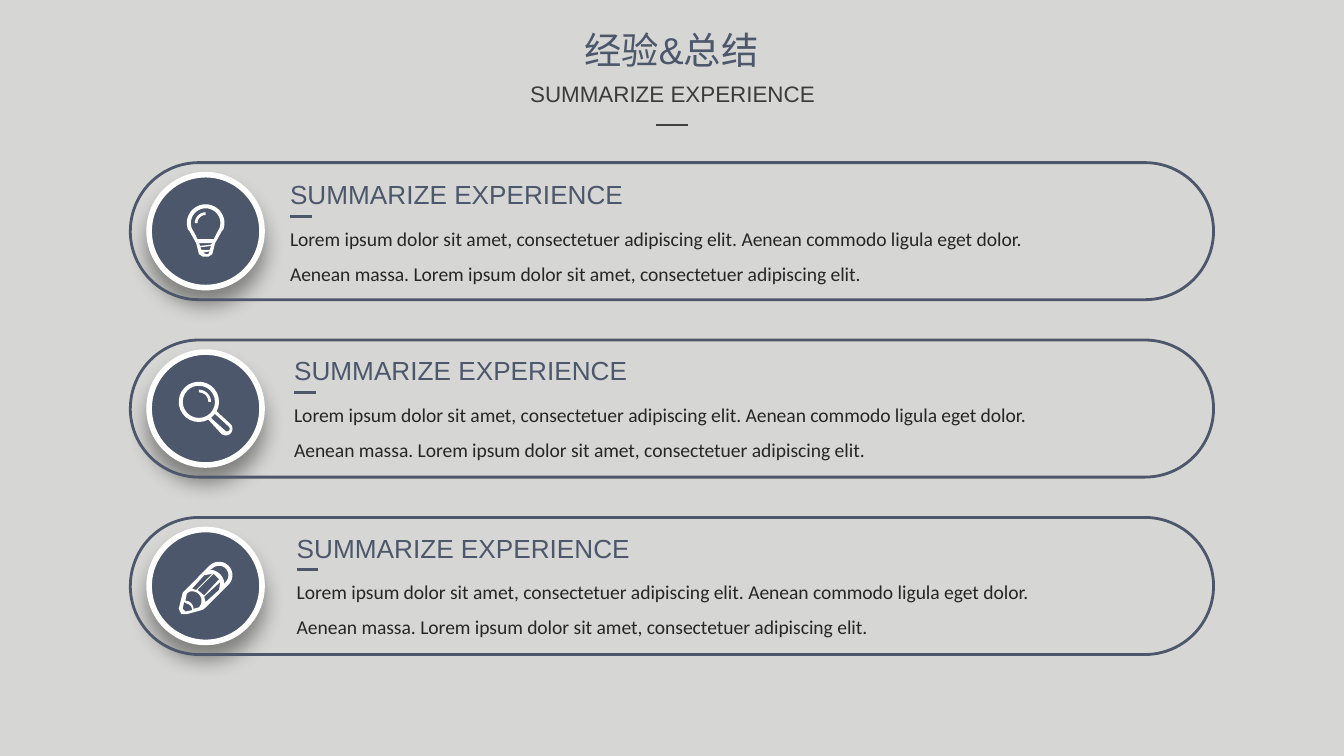
from math import cos, radians, sin

from lxml import etree
from pptx import Presentation
from pptx.dml.color import RGBColor
from pptx.enum.shapes import MSO_CONNECTOR, MSO_SHAPE
from pptx.enum.text import MSO_AUTO_SIZE, PP_ALIGN
from pptx.oxml import parse_xml
from pptx.oxml.ns import nsdecls, qn
from pptx.util import Inches, Pt

STRAIGHT = MSO_CONNECTOR.STRAIGHT
OVAL = MSO_SHAPE.OVAL
PILL = MSO_SHAPE.ROUNDED_RECTANGLE
FIT = MSO_AUTO_SIZE.SHAPE_TO_FIT_TEXT
CENTER, LEFT = PP_ALIGN.CENTER, PP_ALIGN.LEFT
COLORS = {
    "background": "D6D6D4", "slate": "4C576B", "subtitle": "3B3B3B",
    "rule": "404040", "body": "262626", "white": "FFFFFF",
}
COLORS = {name: RGBColor.from_string(value) for name, value in COLORS.items()}
HEADING = "SUMMARIZE EXPERIENCE"
BODY = (
    "Lorem ipsum dolor sit amet, consectetuer adipiscing elit. "
    "Aenean commodo ligula eget dolor. Aenean massa. "
    "Lorem ipsum dolor sit amet, consectetuer adipiscing elit."
)

deck = Presentation()
deck.slide_width = Inches(10)
deck.slide_height = deck.slide_width * 9 // 16
page = deck.slides.add_slide(deck.slide_layouts[6])
page.background.fill.solid()
page.background.fill.fore_color.rgb = COLORS["background"]


def add_text(text, frame, size, color, font="Arial", align=LEFT, wrap=True, spacing=None):
    box = page.shapes.add_textbox(*map(Inches, frame))
    box.text_frame.text = text
    box.text_frame.word_wrap = wrap
    box.text_frame.auto_size = FIT
    para = box.text_frame.paragraphs[0]
    para.alignment = align
    para.line_spacing = spacing
    span = para.runs[0]
    span.font.size, span.font.name = Pt(size), font
    span.font.color.rgb = COLORS[color]


def arc(x, y, radius, start, end):
    """Points along an arc, in degrees clockwise from the right."""
    angles = [radians(start + (end - start) * step / 24) for step in range(25)]
    return [(x + radius * cos(angle), y + radius * sin(angle)) for angle in angles]


# Title block
rules = [(4.88, 0.93, 0.24, "rule")]
add_text(HEADING, (3.26, 0.55, 3.49, 0.3), 12, "subtitle", align=CENTER)
add_text("经验&总结", (3.82, 0.15, 2.35, 0.44), 20, "slate", align=CENTER)

# Three rows: badge, pill outline and text
for row, (text_left, rule_top) in enumerate([(2.06, 1.61), (2.09, 2.92), (2.11, 4.24)]):
    top = 1.21 + 1.32 * row
    badge = page.shapes.add_shape(
        OVAL, Inches(1.11), Inches(top + 0.09), Inches(0.84), Inches(0.84))
    badge.fill.solid()
    badge.fill.fore_color.rgb = COLORS["slate"]
    badge.line.color.rgb = COLORS["white"]
    badge.line.width = Pt(3)
    badge._element.spPr.append(parse_xml(
        f'<a:effectLst {nsdecls("a")}>'
        f'<a:outerShdw blurRad="{Pt(11)}" dist="{Pt(8)}" dir="5400000" rotWithShape="0">'
        '<a:srgbClr val="000000"><a:alpha val="40000"/></a:srgbClr>'
        '</a:outerShdw></a:effectLst>'))

    pill = page.shapes.add_shape(
        PILL, Inches(0.97), Inches(top), Inches(8.06), Inches(1.02))
    pill.adjustments[0] = 0.5
    pill.shadow.inherit = False
    pill.fill.background()
    pill.line.color.rgb = COLORS["slate"]
    pill.line.width = Pt(1.5)

    add_text(BODY, (text_left, rule_top - 0.06, 5.74, 0.63), 10.5, "body",
             font="Calibri", spacing=1.5)
    add_text(HEADING, (text_left, rule_top - 0.33, 2.7, 0.34), 14, "slate", wrap=False)
    rules.append((text_left + 0.1, rule_top, 0.16, "slate"))

for left, top, width, color in rules:
    rule = page.shapes.add_connector(
        STRAIGHT, Inches(left), Inches(top), Inches(left + width), Inches(top))
    rule.line.color.rgb = COLORS[color]
    rule.line.width = Pt(1.5)
    etree.SubElement(rule._element.spPr, qn("a:effectLst"))

# Icons: the outer contour first, then the holes cut out of it
pencil = [
    [(1.33, 4.53), (1.36, 4.41)] + arc(1.63, 4.28, 0.1, 225, 405)
    + [(1.52, 4.53), (1.5, 4.54), (1.39, 4.57), (1.35, 4.57)],
    arc(1.63, 4.28, 0.07, 225, 405) + arc(1.56, 4.35, 0.11, 360, 270),
    [(1.39, 4.42)] + arc(1.43, 4.47, 0.07, 250, 405) + arc(1.38, 4.53, 0.06, 360, 270),
    [(1.37, 4.48)] + arc(1.38, 4.54, 0.05, 280, 360) + [(1.38, 4.55), (1.36, 4.53)],
    [(1.43, 4.38), (1.52, 4.28), (1.58, 4.27), (1.46, 4.39)],
    [(1.47, 4.39), (1.59, 4.27), (1.63, 4.31), (1.52, 4.43)],
    [(1.52, 4.44), (1.64, 4.33), (1.63, 4.39), (1.53, 4.48)],
]
bulb = [
    arc(1.53, 1.66, 0.14, 160, 380)
    + [(1.65, 1.72), (1.6, 1.81), (1.58, 1.89), (1.55, 1.91),
       (1.51, 1.91), (1.48, 1.89), (1.46, 1.81), (1.41, 1.72)],
    arc(1.53, 1.66, 0.11, 160, 380)
    + [(1.61, 1.74), (1.59, 1.78), (1.47, 1.78), (1.45, 1.74)],
    [(1.48, 1.81), (1.58, 1.81), (1.57, 1.82), (1.49, 1.83)],
    [(1.49, 1.84), (1.57, 1.83), (1.56, 1.86), (1.5, 1.86)],
    [(1.51, 1.88), (1.56, 1.87), (1.55, 1.89), (1.53, 1.89)],
]
bulb_shine = [arc(1.53, 1.66, 0.08, 180, 270) + arc(1.53, 1.66, 0.06, 270, 180)]
magnifier = [
    arc(1.48, 2.99, 0.15, 62, 388) + arc(1.68, 3.19, 0.05, -45, 135),
    arc(1.48, 2.99, 0.12, 0, 360),
    [(1.6, 3.08)] + arc(1.69, 3.19, 0.02, -45, 135) + [(1.57, 3.11)],
]
magnifier_shine = [arc(1.48, 2.99, 0.09, 270, 360) + arc(1.48, 2.99, 0.07, 360, 270)]

for contours in (pencil, bulb, bulb_shine, magnifier, magnifier_shine):
    builder = None
    for contour in contours:
        points = [(Inches(x), Inches(y)) for x, y in contour]
        if builder is None:
            builder = page.shapes.build_freeform(*points[0])
        else:
            builder.move_to(*points[0])
        builder.add_line_segments(points[1:], close=True)
    icon = builder.convert_to_shape()
    icon.shadow.inherit = False
    icon.fill.solid()
    icon.fill.fore_color.rgb = COLORS["white"]
    icon.line.fill.background()

deck.save("out.pptx")
